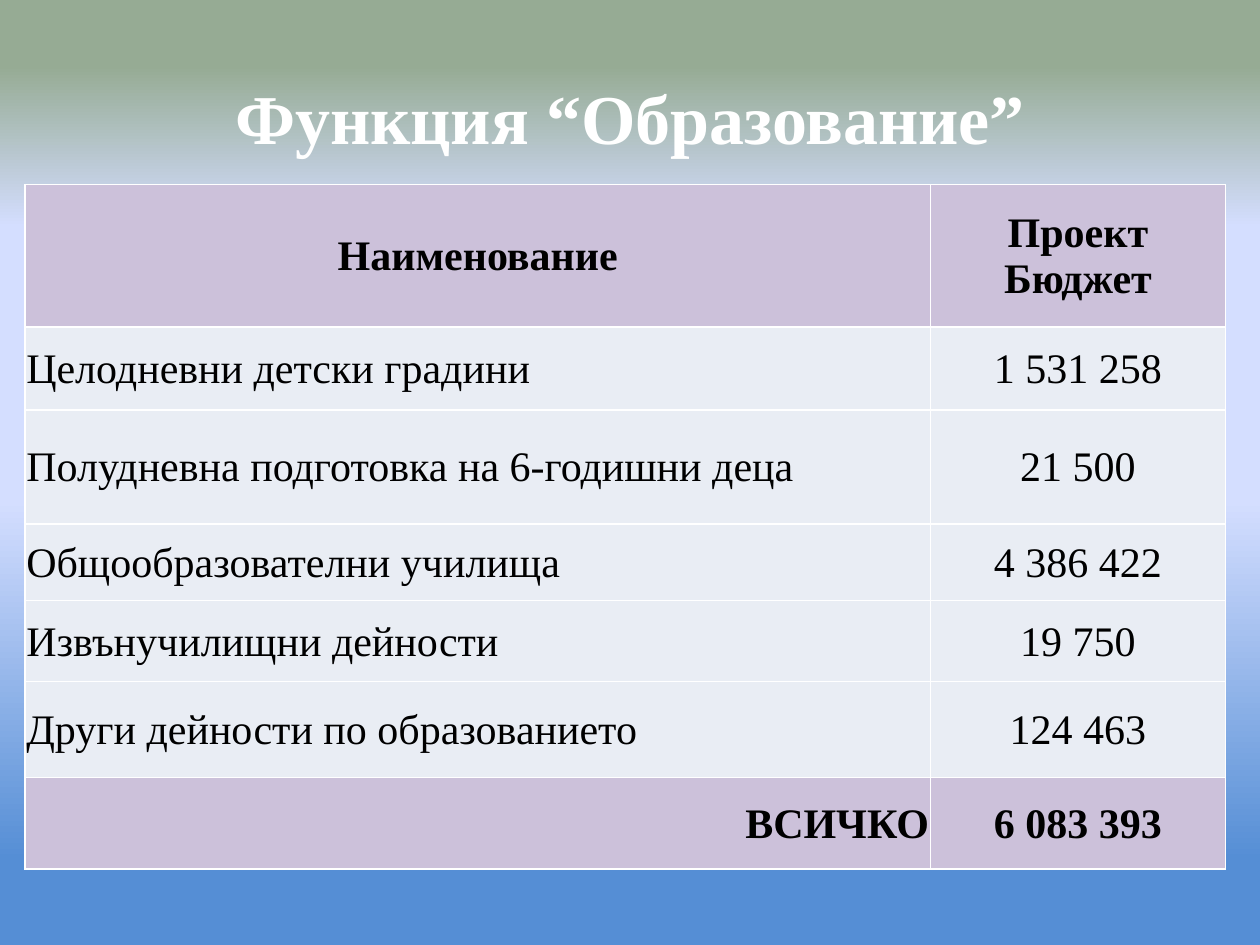
from lxml import etree
from pptx import Presentation
from pptx.dml.color import RGBColor
from pptx.enum.text import MSO_ANCHOR, PP_ALIGN
from pptx.oxml.ns import qn
from pptx.util import Cm, Pt

LEFT, CENTER, RIGHT = PP_ALIGN.LEFT, PP_ALIGN.CENTER, PP_ALIGN.RIGHT
MIDDLE = MSO_ANCHOR.MIDDLE
COLORS = {
    "white": "FFFFFF", "black": "000000", "lilac": "CCC1DA", "pale": "E9EDF4",
    "blue": "558ED5", "sky": "D4DEFF", "green": "96AB94",
}
BACKGROUND = [(9, "blue"), (47, "sky"), (76, "sky"), (93, "green")]
COLUMN_WIDTHS = [18.26, 5.94]
BUDGET = [
    (2.87, "Наименование", "Проект Бюджет"),
    (1.68, "Целодневни детски градини", "1 531 258"),
    (2.29, "Полудневна подготовка на 6-годишни деца", "21 500"),
    (1.55, "Общообразователни училища", "4 386 422"),
    (1.63, "Извънучилищни дейности", "19 750"),
    (1.93, "Други дейности по образованието", "124 463"),
    (1.85, "ВСИЧКО", "6 083 393"),
]


class SlideBuilder:
    font = "Times New Roman"

    def __init__(self, page):
        self.page = page

    def background(self, stops):
        fill = self.page.background.fill
        fill.gradient()
        fill.gradient_angle = 90
        stop_list = self.page.element.find(".//" + qn("a:gsLst"))
        for stop in list(stop_list):
            stop_list.remove(stop)
        for percent, color in stops:
            stop = etree.SubElement(stop_list, qn("a:gs"), pos=str(percent * 1000))
            etree.SubElement(stop, qn("a:srgbClr"), val=COLORS[color])

    def add_text(self, frame, text, size, color, bold, align):
        para = frame.paragraphs[0]
        para.alignment = align
        span = para.add_run()
        span.text = text
        span.font.name = self.font
        span.font.size = Pt(size)
        span.font.bold = bold
        span.font.color.rgb = RGBColor.from_string(COLORS[color])

    def title(self, text, left, top, width, height):
        box = self.page.shapes.title
        box.left, box.top, box.width, box.height = map(Cm, (left, top, width, height))
        box.text_frame.vertical_anchor = MIDDLE
        self.add_text(box.text_frame, text, 40, "white", True, CENTER)

    def borders(self, cell):
        properties = cell._tc.get_or_add_tcPr()
        for position, side in enumerate(("lnL", "lnR", "lnT", "lnB")):
            line = etree.Element(qn("a:" + side), w=str(Pt(1)))
            solid = etree.SubElement(line, qn("a:solidFill"))
            etree.SubElement(solid, qn("a:srgbClr"), val=COLORS["white"])
            properties.insert(position, line)

    def cell(self, cell, text, fill, bold, align):
        cell.margin_left = cell.margin_right = cell.margin_top = Cm(0.03)
        cell.margin_bottom = 0
        cell.vertical_anchor = MIDDLE
        cell.fill.solid()
        cell.fill.fore_color.rgb = RGBColor.from_string(COLORS[fill])
        self.borders(cell)
        self.add_text(cell.text_frame, text, 24, "black", bold, align)

    def table(self, rows, widths, left, top):
        height = sum(row[0] for row in rows)
        table = self.page.shapes.add_table(
            len(rows), len(widths), Cm(left), Cm(top), Cm(sum(widths)), Cm(height)
        ).table
        for column, width in zip(table.columns, widths):
            column.width = Cm(width)
        last = len(rows) - 1
        name_align = {0: CENTER, last: RIGHT}
        for index, (row_height, name, amount) in enumerate(rows):
            table.rows[index].height = Cm(row_height)
            strong = index in name_align
            fill = "lilac" if strong else "pale"
            self.cell(table.cell(index, 0), name, fill, strong, name_align.get(index, LEFT))
            self.cell(table.cell(index, 1), amount, fill, strong, CENTER)


def main():
    deck = Presentation()
    deck.slide_width, deck.slide_height = Cm(25.4), Cm(19.05)
    builder = SlideBuilder(deck.slides.add_slide(deck.slide_layouts[5]))
    builder.background(BACKGROUND)
    builder.title("Функция “Образование”", 1.27, 0.76, 22.86, 3.18)
    builder.table(BUDGET, COLUMN_WIDTHS, 0.5, 3.72)
    deck.save("out.pptx")


if __name__ == "__main__":
    main()
